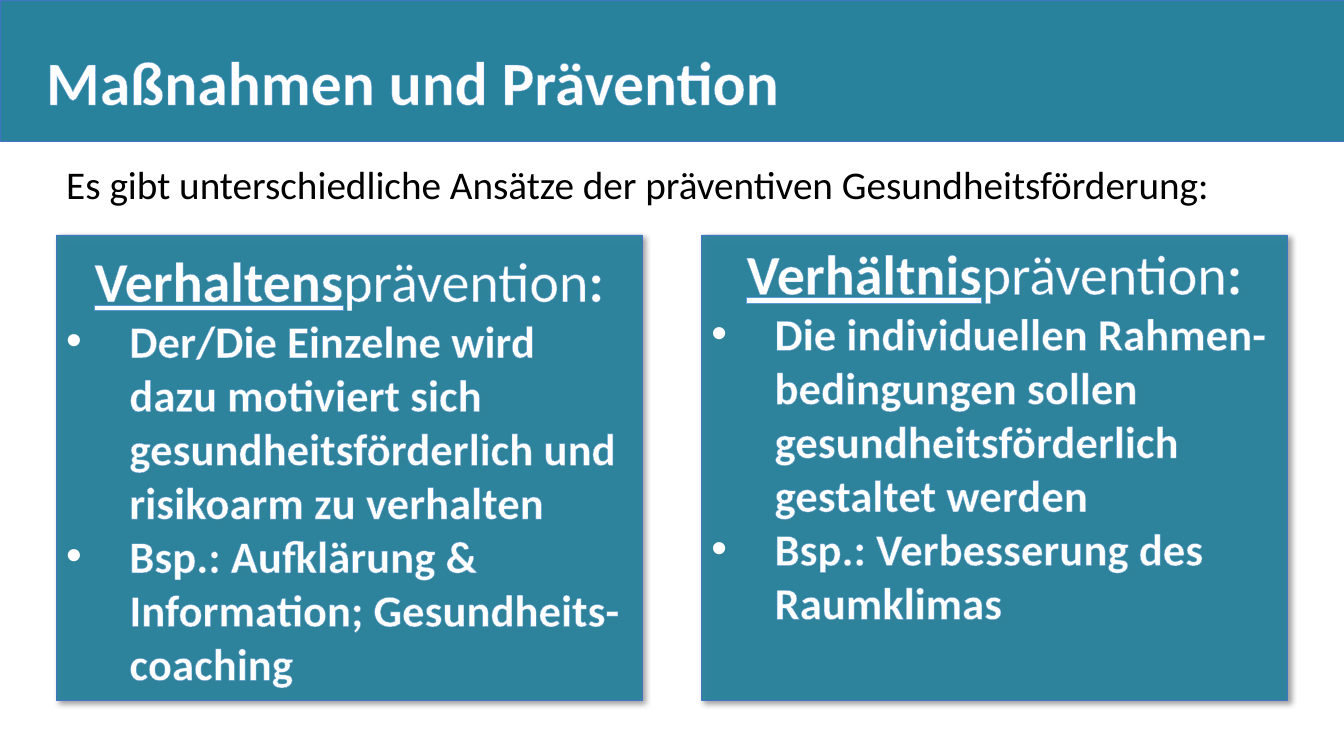
import dataclasses
import typing

import lxml.etree
import pptx
import pptx.dml.color
import pptx.enum.shapes
import pptx.enum.text
import pptx.oxml.ns
import pptx.util

Cm = pptx.util.Cm
Pt = pptx.util.Pt
qn = pptx.oxml.ns.qn


@dataclasses.dataclass(frozen=True)
class Theme:
    font: str = "Calibri"
    teal: str = "29829C"
    border: str = "4472C4"
    outline: str = "5B9BD5"
    light: str = "FFFFFF"
    dark: str = "000000"
    title_size: int = 44
    heading_size: int = 40
    bullet_size: int = 32
    intro_size: int = 28


@dataclasses.dataclass(frozen=True)
class Approach:
    stem: str
    bullets: tuple[str, ...]
    bottom_inset: float = 0.13


THEME = Theme()
PAGE_WIDTH = 33.87
PANEL_LEFT, PANEL_TOP, PANEL_WIDTH, PANEL_HEIGHT = 1.42, 5.92, 14.76, 11.73
PANEL_STEP = 16.26
BULLET_INDENT = 1.59

APPROACHES = (
    Approach("Verhaltens", (
        "Der/Die Einzelne wird dazu motiviert sich gesundheitsförderlich und risikoarm zu verhalten",
        "Bsp.: Aufklärung & Information; Gesundheits-coaching",
    )),
    Approach("Verhältnis", (
        "Die individuellen Rahmen-bedingungen sollen gesundheitsförderlich gestaltet werden",
        "Bsp.: Verbesserung des Raumklimas",
    ), bottom_inset=1.85),
)


def rgb(colour: str) -> pptx.dml.color.RGBColor:
    return pptx.dml.color.RGBColor.from_string(colour)


def add_node(parent: typing.Any, tag: str, **attributes: typing.Any) -> typing.Any:
    values = {name: str(value) for name, value in attributes.items()}
    return lxml.etree.SubElement(parent, qn(tag), values)


def set_formats(target: typing.Any, formats: dict[str, typing.Any]) -> None:
    for name, value in formats.items():
        setattr(target, name, value)


def add_span(para: typing.Any, text: str, size: int, colour: str, **formats: typing.Any) -> typing.Any:
    span = para.add_run()
    span.text = text
    set_formats(span.font, {"name": THEME.font, "size": Pt(size), **formats})
    span.font.color.rgb = rgb(colour)
    return span


def add_outlined_span(para: typing.Any, text: str, size: int, **formats: typing.Any) -> None:
    """Add light text with a thin coloured contour."""
    span = add_span(para, text, size, THEME.light, **formats)
    properties = span.font.fill and span._r.get_or_add_rPr()
    line = add_node(properties, "a:ln", w=Pt(0.8))
    add_node(add_node(line, "a:solidFill"), "a:srgbClr", val=THEME.outline)
    properties.insert(0, line)


def add_teal_box(page: typing.Any, left: float, top: float, width: float, height: float) -> typing.Any:
    box = page.shapes.add_shape(
        pptx.enum.shapes.MSO_SHAPE.RECTANGLE, Cm(left), Cm(top), Cm(width), Cm(height)
    )
    box.shadow.inherit = False
    box.fill.solid()
    box.fill.fore_color.rgb = rgb(THEME.teal)
    box.line.color.rgb = rgb(THEME.border)
    box.line.width = Pt(0.5)
    return box


def add_text_box(page: typing.Any, left: float, top: float, width: float, height: float,
                 wrap: bool) -> typing.Any:
    box = page.shapes.add_textbox(Cm(left), Cm(top), Cm(width), Cm(height))
    box.text_frame.word_wrap = wrap
    return box


def soften(box: typing.Any) -> None:
    """Make the fill slightly transparent and cast a soft shadow."""
    properties = box.element.spPr
    fill_colour = properties.find(qn("a:solidFill")).find(qn("a:srgbClr"))
    add_node(fill_colour, "a:alpha", val=95000)
    shadow = add_node(
        properties.find(qn("a:effectLst")), "a:outerShdw", blurRad=Pt(4), dist=Pt(3),
        dir=45 * 60000, algn="tl", rotWithShape=0,
    )
    shadow_colour = add_node(shadow, "a:srgbClr", val=THEME.dark)
    add_node(shadow_colour, "a:alpha", val=40000)


def add_bullet(frame: typing.Any, text: str) -> None:
    para = frame.add_paragraph()
    para.alignment = pptx.enum.text.PP_ALIGN.LEFT
    properties = para._p.get_or_add_pPr()
    properties.set("marL", str(Cm(BULLET_INDENT)))
    properties.set("indent", str(-Cm(BULLET_INDENT)))
    add_node(properties, "a:buFont", typeface="Arial")
    add_node(properties, "a:buChar", char="•")
    add_outlined_span(para, text, THEME.bullet_size, bold=True)


def add_panel(page: typing.Any, left: float, approach: Approach) -> None:
    box = add_teal_box(page, left, PANEL_TOP, PANEL_WIDTH, PANEL_HEIGHT)
    soften(box)
    frame = box.text_frame
    set_formats(frame, {
        "word_wrap": True,
        "vertical_anchor": pptx.enum.text.MSO_ANCHOR.MIDDLE,
        "margin_bottom": Cm(approach.bottom_inset),
    })
    heading = frame.paragraphs[0]
    heading.alignment = pptx.enum.text.PP_ALIGN.CENTER
    add_outlined_span(heading, approach.stem, THEME.heading_size, bold=True, underline=True)
    add_outlined_span(heading, "prävention", THEME.heading_size, bold=False)
    add_outlined_span(heading, ":", THEME.heading_size, bold=True)
    for text in approach.bullets:
        add_bullet(frame, text)


def add_intro(page: typing.Any) -> None:
    para = add_text_box(page, 1.42, 4.06, 29.74, 1.42, wrap=True).text_frame.paragraphs[0]
    set_formats(para, {"line_spacing": 0.9, "space_before": Pt(10)})
    add_span(para, "Es gibt unterschiedliche Ansätze der präventiven Gesundheitsförderung:",
             THEME.intro_size, THEME.dark)


def add_title(page: typing.Any) -> None:
    add_teal_box(page, 0, 0, PAGE_WIDTH, 3.56)
    frame = add_text_box(page, 0.91, 0.97, 19.18, 2.13, wrap=False).text_frame
    frame.auto_size = pptx.enum.text.MSO_AUTO_SIZE.SHAPE_TO_FIT_TEXT
    add_outlined_span(frame.paragraphs[0], "Maßnahmen und Prävention", THEME.title_size, bold=True)


def main() -> None:
    deck = pptx.Presentation()
    set_formats(deck, {"slide_width": Cm(PAGE_WIDTH), "slide_height": Cm(19.05)})
    page = deck.slides.add_slide(deck.slide_layouts[6])
    add_intro(page)
    add_title(page)
    for index, approach in enumerate(APPROACHES):
        add_panel(page, PANEL_LEFT + index * PANEL_STEP, approach)
    deck.save("out.pptx")


if __name__ == "__main__":
    main()
